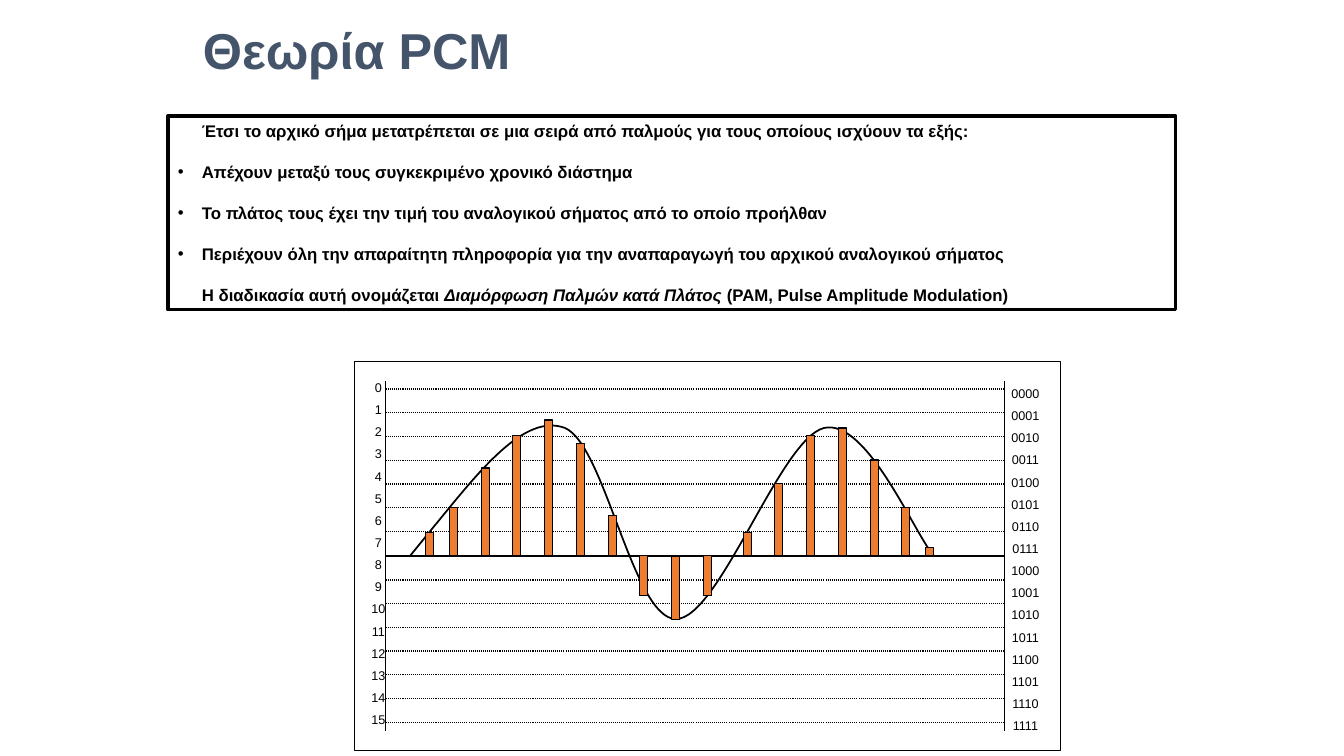
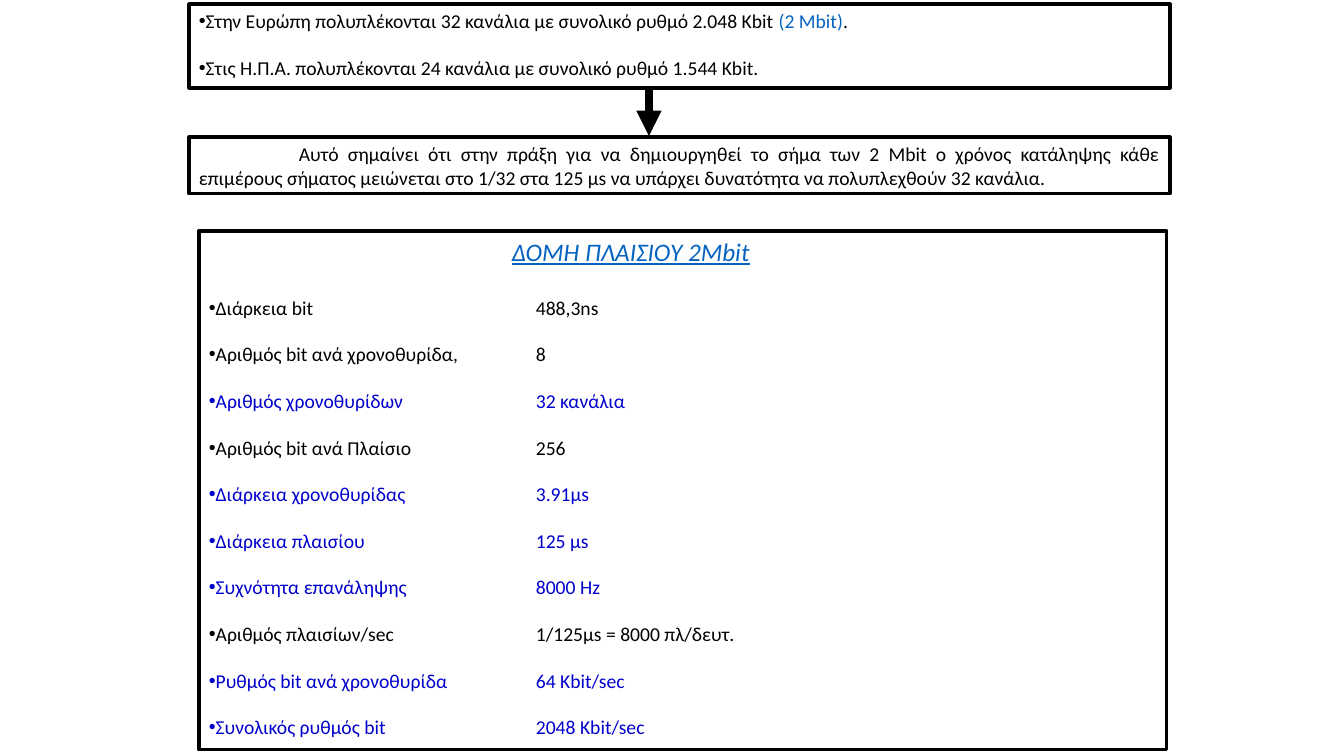
from lxml import etree
from pptx import Presentation
from pptx import util as u
from pptx.dml.color import RGBColor
from pptx.enum import dml, shapes, text
from pptx.oxml.ns import qn

BLACK, SLATE, ORANGE = "000000", "44546A", "ED7D31"
LINK, BLUE = "0563C1", "0000CC"
EMU_PER_PX = 914400 / 100.8


def px(n):
    return u.Emu(round(n * EMU_PER_PX))


def rgb(color):
    return RGBColor.from_string(color)


def child(parent, tag, **attrs):
    el = etree.SubElement(parent, qn(tag))
    for name, value in attrs.items():
        el.set(name, str(value))
    return el


class Deck:
    """Holds the shared style and the slide being drawn."""

    def __init__(self):
        self.prs = Presentation()
        self.prs.slide_width, self.prs.slide_height = px(1344), px(756)
        self.font, self.size = "Arial", 12

    def slide(self, font, size):
        self.s = self.prs.slides.add_slide(self.prs.slide_layouts[6])
        self.font, self.size = font, size

    def outline(self, sp, width):
        sp.line.color.rgb = rgb(BLACK)
        sp.line.width = u.Pt(width)

    def rect(self, x, y, w, h, width=0.75, fill=None):
        sp = self.s.shapes.add_shape(shapes.MSO_SHAPE.RECTANGLE,
                                     px(x), px(y), px(w), px(h))
        sp.shadow.inherit = False
        if fill:
            sp.fill.solid()
            sp.fill.fore_color.rgb = rgb(fill)
        else:
            sp.fill.background()
        self.outline(sp, width)
        return sp

    def box(self, x, y, w, h, anchor=text.MSO_ANCHOR.TOP):
        """Thick framed box; returns its text frame."""
        return self.frame(self.rect(x, y, w, h, 2.25), anchor)

    def label(self, x, y, w, h, anchor=text.MSO_ANCHOR.TOP):
        """Plain text box; returns its text frame."""
        return self.frame(self.s.shapes.add_textbox(px(x), px(y), px(w), px(h)), anchor)

    def frame(self, sp, anchor):
        tf = sp.text_frame
        tf.word_wrap = True
        tf.vertical_anchor = anchor
        return tf

    def para(self, tf, *runs, before=0, margin=0, indent=0, bullet=False,
             tab=None, align=text.PP_ALIGN.JUSTIFY, **style):
        """Add a paragraph; a run is a string or a (string, style) pair."""
        p = tf.paragraphs[0]
        if p.runs:
            p = tf.add_paragraph()
            p.space_before = u.Pt(before)
        p.alignment = align
        pPr = p._p.get_or_add_pPr()
        pPr.set("marL", str(px(margin)))
        pPr.set("indent", str(px(indent)))
        if bullet:
            child(pPr, "a:buFont", typeface="Arial")
            child(pPr, "a:buChar", char="•")
        if tab:
            child(child(pPr, "a:tabLst"), "a:tab", pos=px(tab), algn="l")
        for run in runs:
            words, own = (run, {}) if isinstance(run, str) else run
            self.run(p, words, **{**style, **own})
        return p

    def run(self, p, words, size=None, color=BLACK, bold=False, italic=False,
            underline=False):
        r = p.add_run()
        r.text = words
        f = r.font
        f.name, f.size, f.color.rgb = self.font, u.Pt(size or self.size), rgb(color)
        f.bold, f.italic, f.underline = bold, italic, underline

    def line(self, x1, y1, x2, y2, width=0.75, dotted=False, arrow=False):
        c = self.s.shapes.add_connector(shapes.MSO_CONNECTOR.STRAIGHT,
                                        px(x1), px(y1), px(x2), px(y2))
        self.outline(c, width)
        if dotted:
            c.line.dash_style = dml.MSO_LINE.ROUND_DOT
        if arrow:
            child(c.line._get_or_add_ln(), "a:tailEnd", type="triangle")
        child(c._element.spPr, "a:effectLst")

    def curve(self, start, *points, width=1.25):
        """Cubic curve: each three points are two controls and an end."""
        builder = self.s.shapes.build_freeform(*start, scale=EMU_PER_PX)
        builder.add_line_segments(points, close=False)
        sp = builder.convert_to_shape()
        outline = next(sp._element.iter(qn("a:path")))
        steps = outline.findall(qn("a:lnTo"))
        for i in range(0, len(steps), 3):
            bezier = child(outline, "a:cubicBezTo")
            for step in steps[i:i + 3]:
                bezier.append(step[0])
                outline.remove(step)
        sp.shadow.inherit = False
        sp.fill.background()
        self.outline(sp, width)


def sampling_chart(d):
    left, right, top, axis, row_count = 386, 1005, 389, 556, 15
    d.curve((436, 524),
            (481, 469), (525, 413), (565, 428),
            (605, 445), (633, 619), (676, 619),
            (719, 619), (780, 439), (824, 428),
            (867, 418), (915, 535), (934, 556))
    d.line(436, 524, 410, axis, 1.25)
    for i in range(row_count):
        y = top + round(i * (axis - top) / 7)
        d.line(left, y, right, y, dotted=y != axis)
    for x in (left, right):
        d.line(x, 381, x, 731)

    for x, y, w, pattern in ((347, 375, 63, "{}"), (990, 381, 71, "{:04b}")):
        tf = d.label(x, y, w, 369)
        for level in range(16):
            d.para(tf, pattern.format(level), size=9, before=5,
                   align=text.PP_ALIGN.CENTER)

    # (time step, pulse height in thirds of a level)
    pulses = [(0, 3), (3, 6), (7, 11), (11, 15), (15, 17), (19, 14), (23, 5),
              (27, -5), (31, -8), (35, -5), (40, 3), (44, 9), (48, 15),
              (52, 16), (56, 12), (60, 6), (63, 1)]
    for step, height in pulses:
        h = 8 * height
        d.rect(426 + round(step * 7.94), axis - max(h, 0), 8, abs(h), fill=ORANGE)
    d.rect(355, 362, 706, 389)


def pcm_theory(d):
    d.slide("Arial", 12)
    sampling_chart(d)
    tf = d.box(168, 116, 1008, 194, text.MSO_ANCHOR.MIDDLE)
    item = dict(before=15, margin=24, bold=True)
    d.para(tf, "Έτσι το αρχικό σήμα μετατρέπεται σε μια σειρά από παλμούς "
               "για τους οποίους ισχύουν τα εξής:", **item)
    for words in (
            "Απέχουν μεταξύ τους συγκεκριμένο χρονικό διάστημα",
            "Το πλάτος τους έχει την τιμή του αναλογικού σήματος από το οποίο προήλθαν",
            "Περιέχουν όλη την απαραίτητη πληροφορία για την αναπαραγωγή του "
            "αρχικού αναλογικού σήματος"):
        d.para(tf, words, bullet=True, indent=-24, **item)
    d.para(tf, "Η διαδικασία αυτή ονομάζεται ",
           ("Διαμόρφωση Παλμών κατά Πλάτος", dict(italic=True)),
           " (ΡΑΜ, Pulse Amplitude Modulation)", **item)

    tf = d.label(193, 13, 360, 72, text.MSO_ANCHOR.BOTTOM)
    p = d.para(tf, "Θεωρία PCM", size=36, color=SLATE, bold=True,
               align=text.PP_ALIGN.LEFT)
    p.line_spacing = 0.9


def frame_structure(d):
    d.slide("Calibri", 14)
    item = dict(before=16.5, bullet=True)
    tf = d.box(189, 4, 981, 84)
    d.para(tf, "Στην Ευρώπη πολυπλέκονται 32 κανάλια με συνολικό ρυθμό 2.048 Κbit ",
           ("(2 Mbit)", dict(color=LINK)), ".", **item)
    d.para(tf, "Στις Η.Π.Α. πολυπλέκονται 24 κανάλια με συνολικό ρυθμό 1.544 Κbit.",
           **item)

    tf = d.box(189, 137, 981, 57)
    d.para(tf, "Αυτό σημαίνει ότι στην πράξη για να δημιουργηθεί το σήμα των 2 Μbit "
               "ο χρόνος κατάληψης κάθε επιμέρους σήματος μειώνεται στο 1/32 στα "
               "125 μs να υπάρχει δυνατότητα να πολυπλεχθούν 32 κανάλια.", indent=100)
    d.line(649, 88, 649, 136, 6, arrow=True)

    tf = d.box(199, 231, 968, 519)
    d.para(tf, "ΔΟΜΗ ΠΛΑΙΣΙΟΥ 2Mbit", margin=303, size=18, color=LINK,
           italic=True, underline=True)
    rows = [("Διάρκεια bit", "488,3ns", BLACK),
            ("Αριθμός bit ανά χρονοθυρίδα,", "8", BLACK),
            ("Αριθμός χρονοθυρίδων", "32 κανάλια", BLUE),
            ("Αριθμός bit ανά Πλαίσιο", "256", BLACK),
            ("Διάρκεια χρονοθυρίδας", "3.91μs", BLUE),
            ("Διάρκεια πλαισίου", "125 μs", BLUE),
            ("Συχνότητα επανάληψης", "8000 Hz", BLUE),
            ("Αριθμός πλαισίων/sec", "1/125μs = 8000 πλ/δευτ.", BLACK),
            ("Ρυθμός bit ανά χρονοθυρίδα", "64 Kbit/sec", BLUE),
            ("Συνολικός ρυθμός bit", "2048 Kbit/sec", BLUE)]
    for i, (name, value, color) in enumerate(rows):
        d.para(tf, f"{name}\t{value}", tab=327, color=color,
               **{**item, "before": 16.5 if i else 21})


def main():
    d = Deck()
    pcm_theory(d)
    frame_structure(d)
    d.prs.save("out.pptx")


if __name__ == "__main__":
    main()
